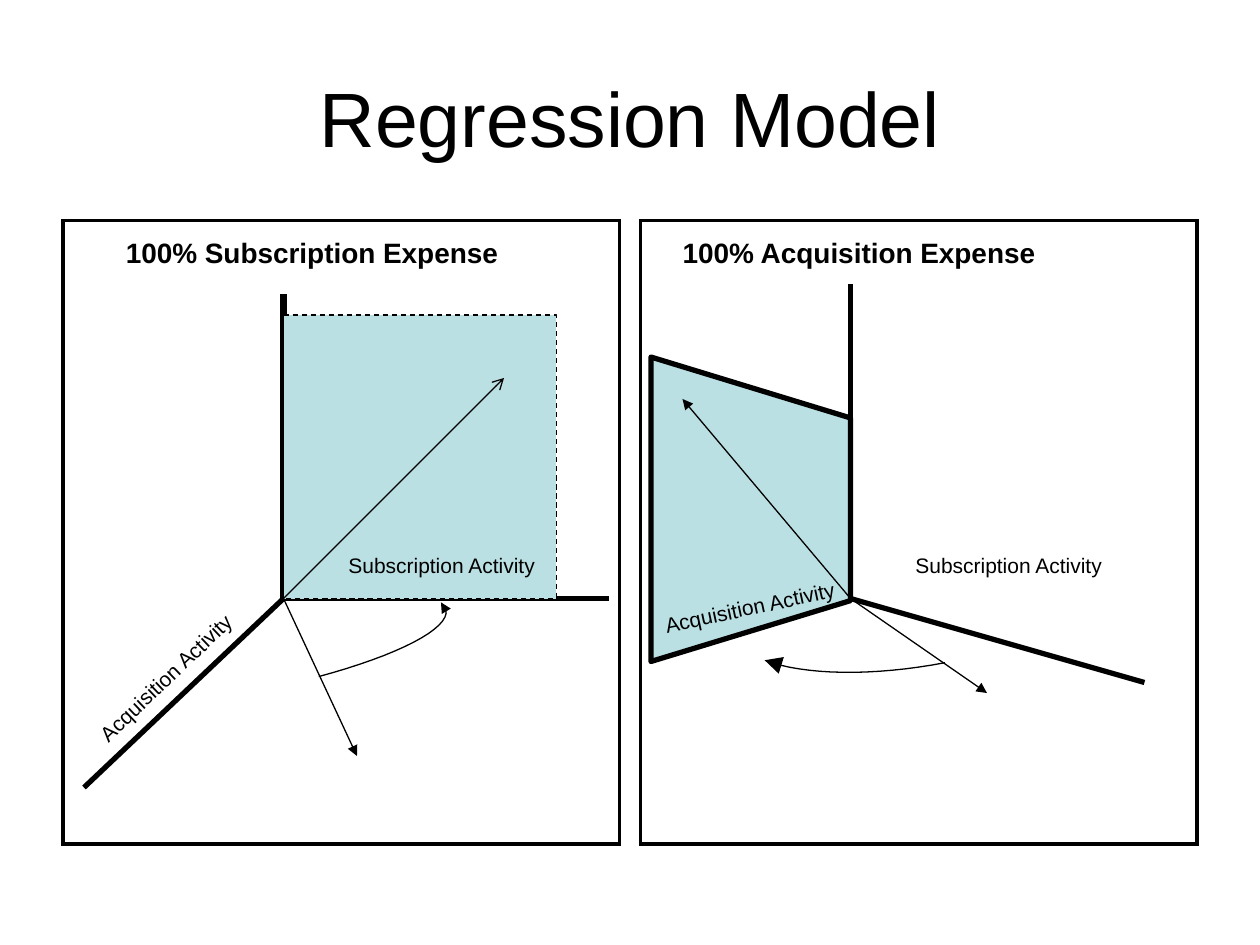
from lxml import etree
from pptx import Presentation
from pptx.dml.color import RGBColor
from pptx.enum.dml import MSO_LINE
from pptx.enum.shapes import MSO_CONNECTOR, MSO_SHAPE
from pptx.enum.text import MSO_ANCHOR, MSO_AUTO_SIZE, PP_ALIGN
from pptx.oxml.ns import qn
from pptx.util import Pt

STRAIGHT = MSO_CONNECTOR.STRAIGHT
PROCESS = MSO_SHAPE.FLOWCHART_PROCESS
MANUAL_OPERATION = MSO_SHAPE.FLOWCHART_MANUAL_OPERATION
DASH = MSO_LINE.DASH
MIDDLE, CENTER = MSO_ANCHOR.MIDDLE, PP_ALIGN.CENTER
FIT_SHAPE = MSO_AUTO_SIZE.SHAPE_TO_FIT_TEXT

FONT = "Arial"
BLACK, PLANE = "000000", "BBE0E3"
THIN, AXIS = 0.75, 3
LEFT_ORIGIN, RIGHT_ORIGIN = (162, 342), (486, 342)


def rgb(color):
    """Return the colour for a hex string."""
    return RGBColor.from_string(color)


def style_font(font, size, bold=False):
    """Set typeface, size, weight and colour."""
    font.name, font.size, font.bold = FONT, Pt(size), bold
    font.color.rgb = rgb(BLACK)


def style_line(sp, width, tail=None, tail_size="med"):
    """Draw a black line, with an optional arrowhead at its end."""
    sp.line.color.rgb = rgb(BLACK)
    sp.line.width = Pt(width)
    if tail:
        ln = sp._element.spPr.find(qn("a:ln"))
        etree.SubElement(ln, qn("a:tailEnd"), type=tail, w=tail_size, len=tail_size)


def add_title(s, text):
    """Fill and place the title placeholder."""
    sp = s.shapes.title
    sp.left, sp.top, sp.width, sp.height = Pt(36), Pt(21.6), Pt(648), Pt(90)
    tf = sp.text_frame
    tf.text, tf.vertical_anchor = text, MIDDLE
    p = tf.paragraphs[0]
    p.alignment = CENTER
    style_font(p.font, 44)


def add_panel(s, left):
    """Add a one-cell table as a bordered panel."""
    table = s.shapes.add_table(1, 1, Pt(left), Pt(126), Pt(318), Pt(356.4)).table
    table.first_row = table.horz_banding = False
    cell = table.cell(0, 0)
    cell.fill.background()
    tcPr = cell._tc.get_or_add_tcPr()
    for i, side in enumerate(("lnL", "lnR", "lnT", "lnB")):
        ln = etree.Element(qn(f"a:{side}"), w=str(Pt(2.25)))
        fill = etree.SubElement(ln, qn("a:solidFill"))
        etree.SubElement(fill, qn("a:srgbClr"), val=BLACK)
        tcPr.insert(i, ln)


def add_line(s, start, end, width=AXIS, tail=None):
    """Add a straight line between two points."""
    sp = s.shapes.add_connector(STRAIGHT, *map(Pt, start + end))
    style_line(sp, width, tail)
    etree.SubElement(sp._element.spPr, qn("a:effectLst"))


def bezier(p0, p1, p2, p3, steps=16):
    """Return points along a cubic curve, without its start."""
    points = []
    for i in range(1, steps + 1):
        t = i / steps
        weights = ((1 - t) ** 3, 3 * t * (1 - t) ** 2, 3 * t * t * (1 - t), t ** 3)
        points.append(tuple(sum(w * c for w, c in zip(weights, axis))
                            for axis in zip(p0, p1, p2, p3)))
    return points


def add_curve(s, points, tail_size="med"):
    """Add an open arrow through chained cubic curves."""
    builder = s.shapes.build_freeform(Pt(points[0][0]), Pt(points[0][1]))
    for i in range(0, len(points) - 1, 3):
        curve = bezier(*points[i:i + 4])
        builder.add_line_segments([(Pt(x), Pt(y)) for x, y in curve], close=False)
    sp = builder.convert_to_shape()
    sp.shadow.inherit = False
    sp.fill.background()
    style_line(sp, THIN, "triangle", tail_size)


def add_plane(s, kind, box, width, rotation=0, dash=None):
    """Add a filled plane."""
    sp = s.shapes.add_shape(kind, *map(Pt, box))
    sp.rotation = rotation
    sp.shadow.inherit = False
    sp.fill.solid()
    sp.fill.fore_color.rgb = rgb(PLANE)
    style_line(sp, width)
    if dash:
        sp.line.dash_style = dash


def add_label(s, text, box, size=12, bold=False, rotation=0):
    """Add a single-line label."""
    sp = s.shapes.add_textbox(*map(Pt, box))
    sp.rotation = rotation
    tf = sp.text_frame
    tf.text, tf.word_wrap, tf.auto_size = text, False, FIT_SHAPE
    style_font(tf.paragraphs[0].font, size, bold)


def add_subscription_diagram(s):
    """Draw the axes with the subscription plane."""
    add_line(s, (162, 168), LEFT_ORIGIN, 4.5)
    add_line(s, LEFT_ORIGIN, (48, 450))
    add_line(s, LEFT_ORIGIN, (348, 342))
    add_curve(s, [(182.2, 386.6), (227.5, 374.4), (257, 359.3), (254.9, 348.5),
                  (254.9, 347), (253.4, 345.6), (252, 344.2)])
    add_plane(s, PROCESS, (162, 180, 156, 162), THIN, dash=DASH)
    add_line(s, LEFT_ORIGIN, (288, 216), THIN, "arrow")
    add_line(s, LEFT_ORIGIN, (204, 432), THIN, "triangle")
    add_label(s, "Acquisition Activity", (38, 376, 114, 21.6), rotation=316.4)
    add_label(s, "Subscription Activity", (192, 312, 121.7, 21.6))
    add_label(s, "100% Subscription Expense", (64.8, 131, 227.5, 26.6), 16, True)


def add_acquisition_diagram(s):
    """Draw the axes with the acquisition plane."""
    add_line(s, RIGHT_ORIGIN, (654, 390))
    add_curve(s, [(540, 378.7), (499, 386.6), (459.4, 385.9), (437, 377.3)], "lg")
    add_plane(s, MANUAL_OPERATION, (342, 234, 174, 114), AXIS, rotation=270)
    add_line(s, RIGHT_ORIGIN, (486, 162))
    add_line(s, RIGHT_ORIGIN, (564, 396), THIN, "triangle")
    add_line(s, RIGHT_ORIGIN, (390, 228), THIN, "triangle")
    add_label(s, "Acquisition Activity", (372, 336, 114, 21.6), rotation=347.9)
    add_label(s, "Subscription Activity", (516, 312, 121.7, 21.6))
    add_label(s, "100% Acquisition Expense", (383, 131, 217.4, 26.6), 16, True)


def main():
    """Build and save the slide."""
    prs = Presentation()
    prs.slide_width, prs.slide_height = Pt(720), Pt(540)
    s = prs.slides.add_slide(prs.slide_layouts[5])
    add_title(s, "Regression Model")
    for left in (36, 366):
        add_panel(s, left)
    add_subscription_diagram(s)
    add_acquisition_diagram(s)
    prs.save("out.pptx")


if __name__ == "__main__":
    main()
